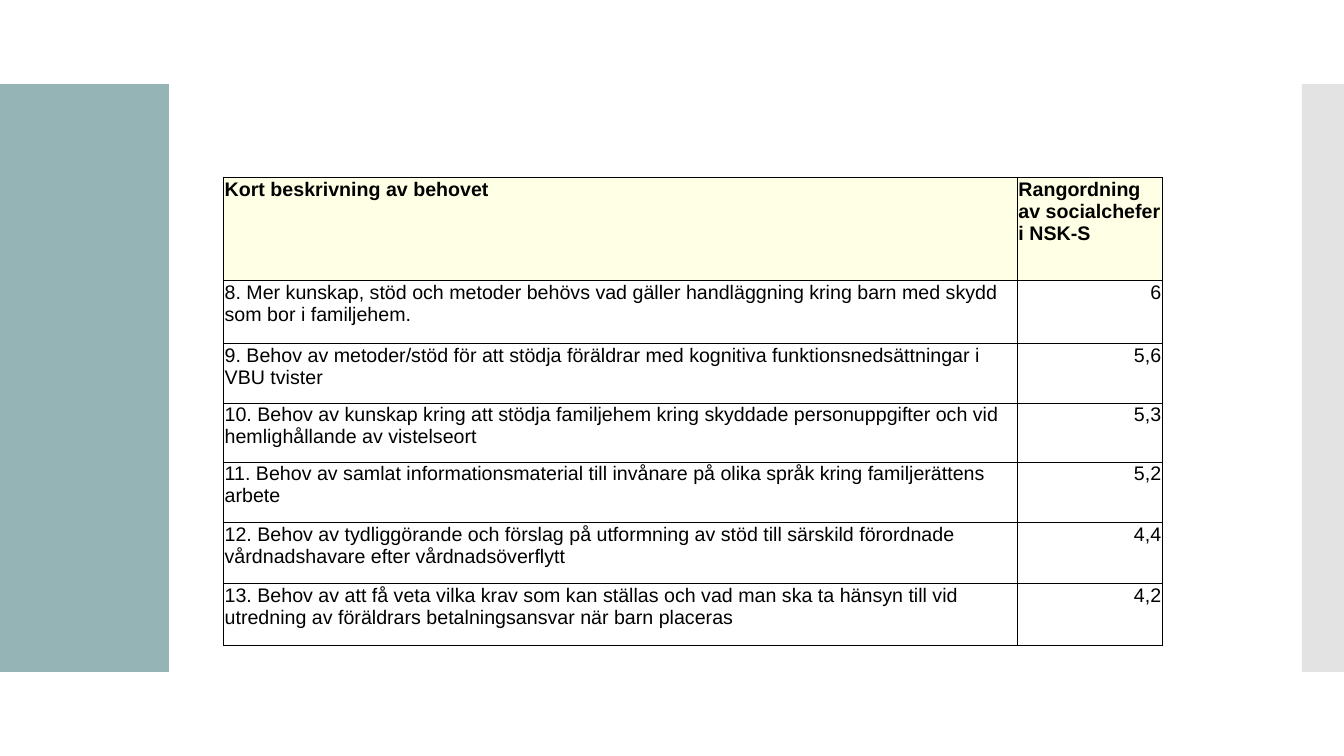
from dataclasses import dataclass

from lxml.etree import SubElement
from pptx import Presentation
from pptx.dml.color import RGBColor
from pptx.enum.shapes import MSO_SHAPE
from pptx.enum.text import PP_ALIGN
from pptx.oxml.ns import qn
from pptx.util import Pt

EMU_PER_PX = 9525


@dataclass(frozen=True)
class Theme:
    teal: str = "94B4B6"
    grey: str = "C8C8C8"
    cream: str = "FFFFE5"
    white: str = "FFFFFF"
    black: str = "000000"
    font: str = "Arial"
    text_size: int = 14
    outer_line: float = 1
    inner_line: float = 0.5


THEME = Theme()

HEADINGS = ("Kort beskrivning av behovet", "Rangordning av socialchefer i NSK-S")
NEEDS = [
    ("8. Mer kunskap, stöd och metoder behövs vad gäller handläggning kring barn med skydd som bor i familjehem.", "6"),
    ("9. Behov av metoder/stöd för att stödja föräldrar med kognitiva funktionsnedsättningar i VBU tvister", "5,6"),
    ("10. Behov av kunskap kring att stödja familjehem kring skyddade personuppgifter och vid hemlighållande av vistelseort", "5,3"),
    ("11. Behov av samlat informationsmaterial till invånare på olika språk kring familjerättens arbete", "5,2"),
    ("12. Behov av tydliggörande och förslag på utformning av stöd till särskild förordnade vårdnadshavare efter vårdnadsöverflytt", "4,4"),
    ("13. Behov av att få veta vilka krav som kan ställas och vad man ska ta hänsyn till vid utredning av föräldrars betalningsansvar när barn placeras", "4,2"),
]
COLUMN_WIDTHS = (756, 138)
ROW_HEIGHTS = (98, 60, 57, 56, 58, 58, 59)


def px(length):
    return length * EMU_PER_PX


def add_bar(page, left, top, width, height, color, opacity=100):
    bar = page.shapes.add_shape(MSO_SHAPE.RECTANGLE, px(left), px(top), px(width), px(height))
    bar.shadow.inherit = False
    bar.line.fill.background()
    bar.fill.solid()
    bar.fill.fore_color.rgb = RGBColor.from_string(color)
    if opacity < 100:
        rgb = bar.fill._xPr.find(".//" + qn("a:srgbClr"))
        SubElement(rgb, qn("a:alpha"), val=str(opacity * 1000))


def add_borders(cell, widths):
    """Draw the borders; widths maps L, R, T and B, in that order, to points."""
    properties = cell._tc.get_or_add_tcPr()
    for side, width in widths.items():
        line = SubElement(properties, qn(f"a:ln{side}"), w=str(Pt(width)))
        fill = SubElement(line, qn("a:solidFill"))
        SubElement(fill, qn("a:srgbClr"), val=THEME.black)


def fill_cell(cell, text, fill=THEME.white, bold=False, align=PP_ALIGN.LEFT):
    cell.margin_left = cell.margin_right = cell.margin_top = px(1)
    cell.margin_bottom = 0
    cell.fill.solid()
    cell.fill.fore_color.rgb = RGBColor.from_string(fill)
    para = cell.text_frame.paragraphs[0]
    para.alignment = align
    span = para.add_run()
    span.text = text
    span.font.name = THEME.font
    span.font.size = Pt(THEME.text_size)
    span.font.bold = bold
    span.font.color.rgb = RGBColor.from_string(THEME.black)


def add_ranking_table(page, left, top):
    rows = [HEADINGS, *NEEDS]
    last_row, last_column = len(rows) - 1, len(HEADINGS) - 1
    table = page.shapes.add_table(len(rows), len(HEADINGS), px(left), px(top),
                                  px(sum(COLUMN_WIDTHS)), px(sum(ROW_HEIGHTS))).table
    table.first_row = table.horz_banding = False
    for column, width in zip(table.columns, COLUMN_WIDTHS):
        column.width = px(width)
    for row, height in zip(table.rows, ROW_HEIGHTS):
        row.height = px(height)

    def line_width(is_outer):
        return THEME.outer_line if is_outer else THEME.inner_line

    for r, row in enumerate(rows):
        for c, text in enumerate(row):
            cell = table.cell(r, c)
            add_borders(cell, {"L": line_width(c == 0), "R": line_width(c == last_column),
                               "T": line_width(r == 0), "B": line_width(r == last_row)})
            if r == 0:
                fill_cell(cell, text, fill=THEME.cream, bold=True)
            else:
                fill_cell(cell, text, align=PP_ALIGN.RIGHT if c == last_column else PP_ALIGN.LEFT)


def main():
    deck = Presentation()
    deck.slide_width, deck.slide_height = px(1280), px(720)
    page = deck.slides.add_slide(deck.slide_layouts[6])
    add_bar(page, 0, 80, 161, 560, THEME.teal)
    add_bar(page, 1240, 80, 40, 560, THEME.grey, opacity=50)
    add_ranking_table(page, 213, 169)
    deck.save("out.pptx")


if __name__ == "__main__":
    main()
